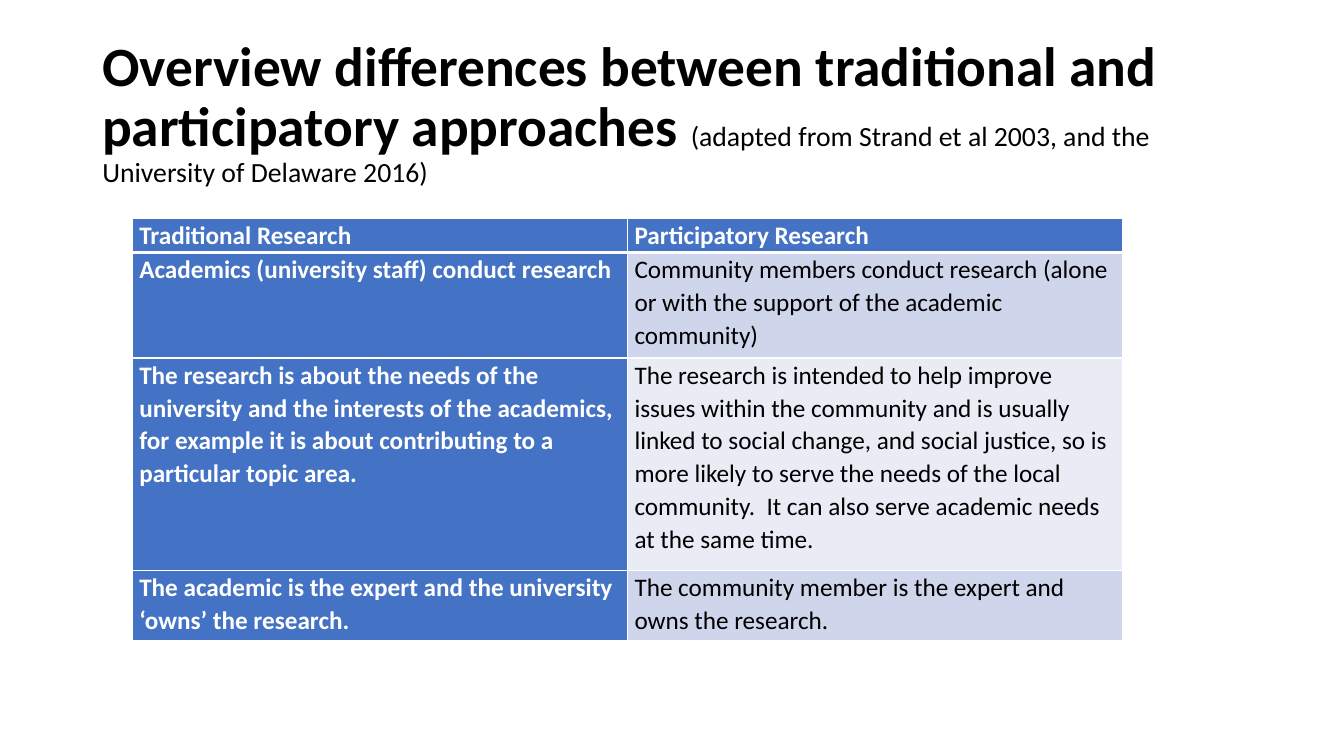
from lxml import etree
from pptx import Presentation
from pptx.dml.color import RGBColor
from pptx.enum.text import MSO_ANCHOR
from pptx.oxml.ns import qn
from pptx.util import Pt

MIDDLE = MSO_ANCHOR.MIDDLE
TOP = MSO_ANCHOR.TOP

FONT = "Calibri"
WHITE = "FFFFFF"
BLACK = "000000"
BLUE = "4472C4"
BANDS = ("CFD5EA", "E9EBF5")

TITLE = "Overview differences between traditional and participatory approaches "
CREDIT = "(adapted from Strand et al 2003, and the University of Delaware 2016)"
COMPARISON = [
    ("Traditional Research", "Participatory Research"),
    ("Academics (university staff) conduct research",
     "Community members conduct research (alone or with the support of the "
     "academic community)"),
    ("The research is about the needs of the university and the interests of "
     "the academics, for example it is about contributing to a particular "
     "topic area.",
     "The research is intended to help improve issues within the community "
     "and is usually linked to social change, and social justice, so is more "
     "likely to serve the needs of the local community.  It can also serve "
     "academic needs at the same time."),
    ("The academic is the expert and the university ‘owns’ the research.",
     "The community member is the expert and owns the research."),
]
ROW_HEIGHTS = (24.5, 75.5, 152, 49.5)


def color(value):
    return RGBColor.from_string(value)


def add_text(para, text, size=18, fill=BLACK, bold=False, spacing=1.07):
    para.line_spacing = spacing
    span = para.add_run()
    span.text = text
    span.font.name = FONT
    span.font.size = Pt(size)
    span.font.bold = bold
    span.font.color.rgb = color(fill)


def set_borders(cell, **widths):
    properties = cell._tc.get_or_add_tcPr()
    for index, side in enumerate("LRTB"):
        line = etree.Element(qn(f"a:ln{side}"), w=str(Pt(widths.get(side, 1))))
        solid = etree.SubElement(line, qn("a:solidFill"))
        etree.SubElement(solid, qn("a:srgbClr"), val=WHITE)
        properties.insert(index, line)


def add_title(page, left, top, width, height):
    box = page.shapes.add_textbox(Pt(left), Pt(top), Pt(width), Pt(height))
    frame = box.text_frame
    frame.word_wrap = True
    frame.vertical_anchor = MIDDLE
    para = frame.paragraphs[0]
    add_text(para, TITLE, size=39.6, bold=True, spacing=0.9)
    add_text(para, CREDIT, size=19.8, spacing=0.9)


def fill_cell(cell, text, row, column):
    strong = row == 0 or column == 0
    cell.margin_left = cell.margin_right = Pt(5)
    cell.margin_top = cell.margin_bottom = 0
    cell.vertical_anchor = TOP
    cell.fill.solid()
    cell.fill.fore_color.rgb = color(BLUE if strong else BANDS[(row - 1) % 2])
    set_borders(cell, T=3 if row == 1 else 1, B=3 if row == 0 else 1)
    add_text(cell.text_frame.paragraphs[0], text,
             fill=WHITE if strong else BLACK, bold=strong)


def add_comparison(page, left, top, width):
    columns = len(COMPARISON[0])
    frame = page.shapes.add_table(len(COMPARISON), columns, Pt(left), Pt(top),
                                  Pt(width), Pt(sum(ROW_HEIGHTS)))
    table = frame.table
    for column in table.columns:
        column.width = Pt(width / columns)
    for row, texts in enumerate(COMPARISON):
        table.rows[row].height = Pt(ROW_HEIGHTS[row])
        for column, text in enumerate(texts):
            fill_cell(table.cell(row, column), text, row, column)


def main():
    deck = Presentation()
    deck.slide_width = Pt(960)
    deck.slide_height = Pt(540)
    page = deck.slides.add_slide(deck.slide_layouts[6])
    add_title(page, 66, 28.75, 828, 104.4)
    add_comparison(page, 94.5, 155.75, 707.5)
    deck.save("out.pptx")


if __name__ == "__main__":
    main()
